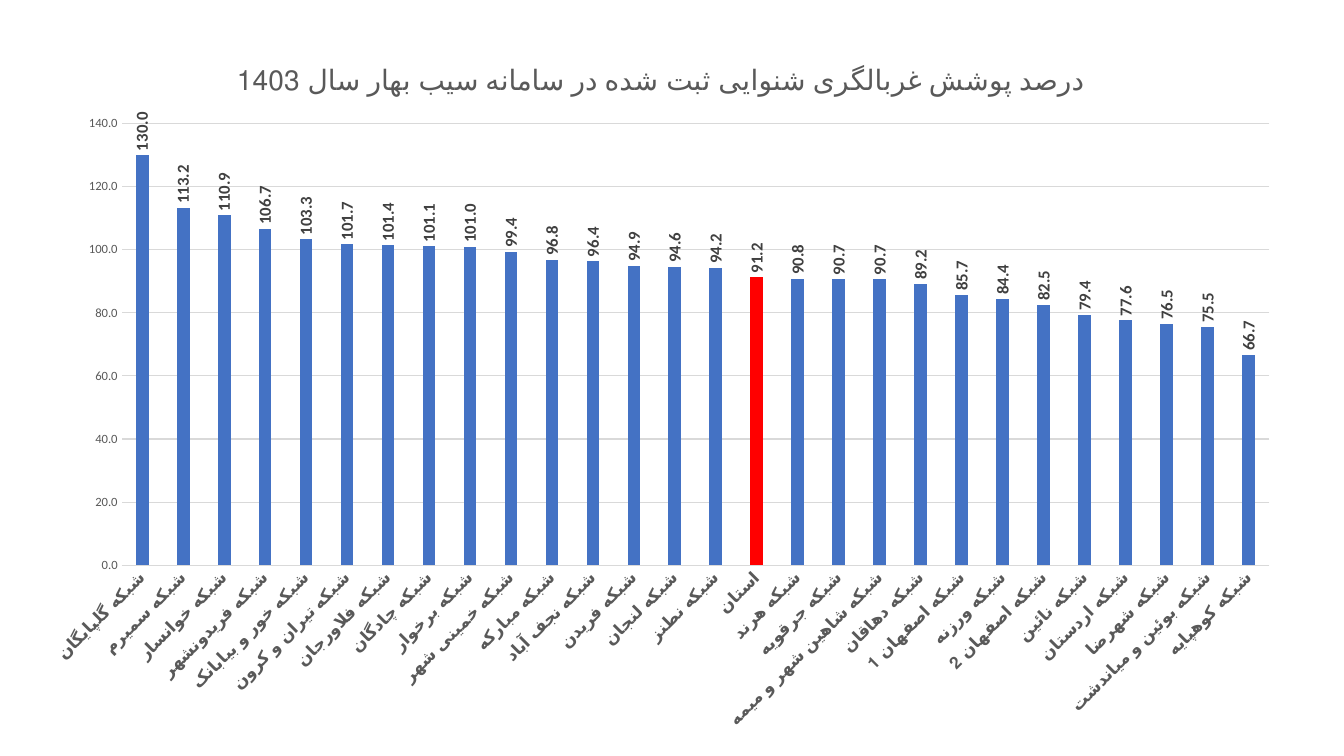
"""Build a slide with a column chart of hearing screening coverage by health network."""
from lxml import etree
from pptx import Presentation
from pptx.chart.data import CategoryChartData
from pptx.dml.color import RGBColor
from pptx.enum import chart as chart_enum
from pptx.oxml import ns
from pptx.util import Inches, Pt

TITLE = "درصد پوشش غربالگری شنوایی ثبت شده در سامانه سیب بهار سال 1403"
PROVINCE = "استان"
COVERAGE = [
    ("شبکه گلپایگان", 130),
    ("شبکه سمیرم", 113.2),
    ("شبکه خوانسار", 110.9),
    ("شبکه فریدونشهر", 106.7),
    ("شبکه خور و بیابانک", 103.3),
    ("شبکه تیران و کرون", 101.7),
    ("شبکه فلاورجان", 101.4),
    ("شبکه چادگان", 101.1),
    ("شبکه برخوار", 101),
    ("شبکه خمینی شهر", 99.4),
    ("شبکه مبارکه", 96.8),
    ("شبکه نجف آباد", 96.4),
    ("شبکه فریدن", 94.9),
    ("شبکه لنجان", 94.6),
    ("شبکه نطنز", 94.2),
    (PROVINCE, 91.2),
    ("شبکه هرند", 90.8),
    ("شبکه جرقویه", 90.7),
    ("شبکه شاهین شهر و میمه", 90.7),
    ("شبکه دهاقان", 89.2),
    ("شبکه اصفهان 1", 85.7),
    ("شبکه ورزنه", 84.4),
    ("شبکه اصفهان 2", 82.5),
    ("شبکه نائین", 79.4),
    ("شبکه اردستان", 77.6),
    ("شبکه شهرضا", 76.5),
    ("شبکه بوئین و میاندشت", 75.5),
    ("شبکه کوهپایه", 66.7),
]
BLUE = RGBColor(0x44, 0x72, 0xC4)
RED = RGBColor(0xFF, 0x00, 0x00)
GRAY = RGBColor(0x59, 0x59, 0x59)
DARK = RGBColor(0x40, 0x40, 0x40)
LIGHT = RGBColor(0xD9, 0xD9, 0xD9)
FONT = "Calibri"


def set_font(font, size, color, bold=False):
    """Apply the chart's typeface with the given size, colour and weight."""
    font.name, font.size, font.bold = FONT, Pt(size), bold
    font.color.rgb = color


def set_line(line, color):
    """Give a line the thin chart weight."""
    line.color.rgb = color
    line.width = Pt(0.75)


def rotate_text(element, degrees):
    """Rotate the text of an axis or of data labels."""
    body = element.find(ns.qn("c:txPr")).find(ns.qn("a:bodyPr"))
    body.set("rot", str(degrees * 60000))
    body.set("vert", "horz")


def place(element, index, **settings):
    """Fix the layout of a chart part in fractions of the chart."""
    layout = element.find(ns.qn("c:layout"))
    if layout is None:
        layout = etree.Element(ns.qn("c:layout"))
        element.insert(index, layout)
    manual = etree.SubElement(layout, ns.qn("c:manualLayout"))
    for name, value in settings.items():
        etree.SubElement(manual, ns.qn(f"c:{name}")).set("val", str(value))


def add_coverage_chart(slide):
    """Add the column chart with the province column highlighted."""
    data = CategoryChartData(number_format="0.0")
    data.categories = [name for name, value in COVERAGE]
    data.add_series("Series 1", [value for name, value in COVERAGE])
    chart = slide.shapes.add_chart(
        chart_enum.XL_CHART_TYPE.COLUMN_CLUSTERED,
        Inches(0.29), Inches(0.38), Inches(12.55), Inches(6.99), data).chart
    set_font(chart.font, 10, RGBColor(0, 0, 0))
    chart.has_legend = False

    chart.has_title = True
    frame = chart.chart_title.text_frame
    frame.text = TITLE
    set_font(frame.paragraphs[0].font, 20, GRAY)
    chart.chart_title.include_in_layout = False

    plot = chart.plots[0]
    plot.gap_width, plot.overlap = 219, -27
    plot.vary_by_categories = False
    series = plot.series[0]
    series.format.fill.solid()
    series.format.fill.fore_color.rgb = BLUE
    province = [name for name, value in COVERAGE].index(PROVINCE)
    highlight = series.points[province].format.fill
    highlight.solid()
    highlight.fore_color.rgb = RED

    plot.has_data_labels = True
    labels = plot.data_labels
    labels.show_value = True
    labels.number_format, labels.number_format_is_linked = "0.0", False
    labels.position = chart_enum.XL_LABEL_POSITION.OUTSIDE_END
    set_font(labels.font, 12, DARK, True)
    rotate_text(labels._element, -90)

    networks, percent = chart.category_axis, chart.value_axis
    for axis in (networks, percent):
        axis.major_tick_mark = axis.minor_tick_mark = chart_enum.XL_TICK_MARK.NONE
    set_font(networks.tick_labels.font, 12, GRAY, True)
    rotate_text(networks._element, -45)
    set_line(networks.format.line, LIGHT)
    set_font(percent.tick_labels.font, 9, GRAY)
    percent.tick_labels.number_format = "0.0"
    percent.tick_labels.number_format_is_linked = False
    percent.minimum_scale, percent.maximum_scale, percent.major_unit = 0, 140, 20
    percent.format.line.fill.background()
    set_line(percent.major_gridlines.format.line, LIGHT)

    place(chart.chart_title._element, 1, xMode="edge", yMode="edge", x=0.16, y=0.03)
    place(plot._element.getparent(), 0, layoutTarget="inner", xMode="edge",
          yMode="edge", x=0.073, y=0.121, w=0.907, h=0.627)


def main():
    """Create the presentation and save it."""
    presentation = Presentation()
    presentation.slide_width, presentation.slide_height = Inches(13.33), Inches(7.5)
    slide = presentation.slides.add_slide(presentation.slide_layouts[6])
    add_coverage_chart(slide)
    presentation.save("out.pptx")


if __name__ == "__main__":
    main()
